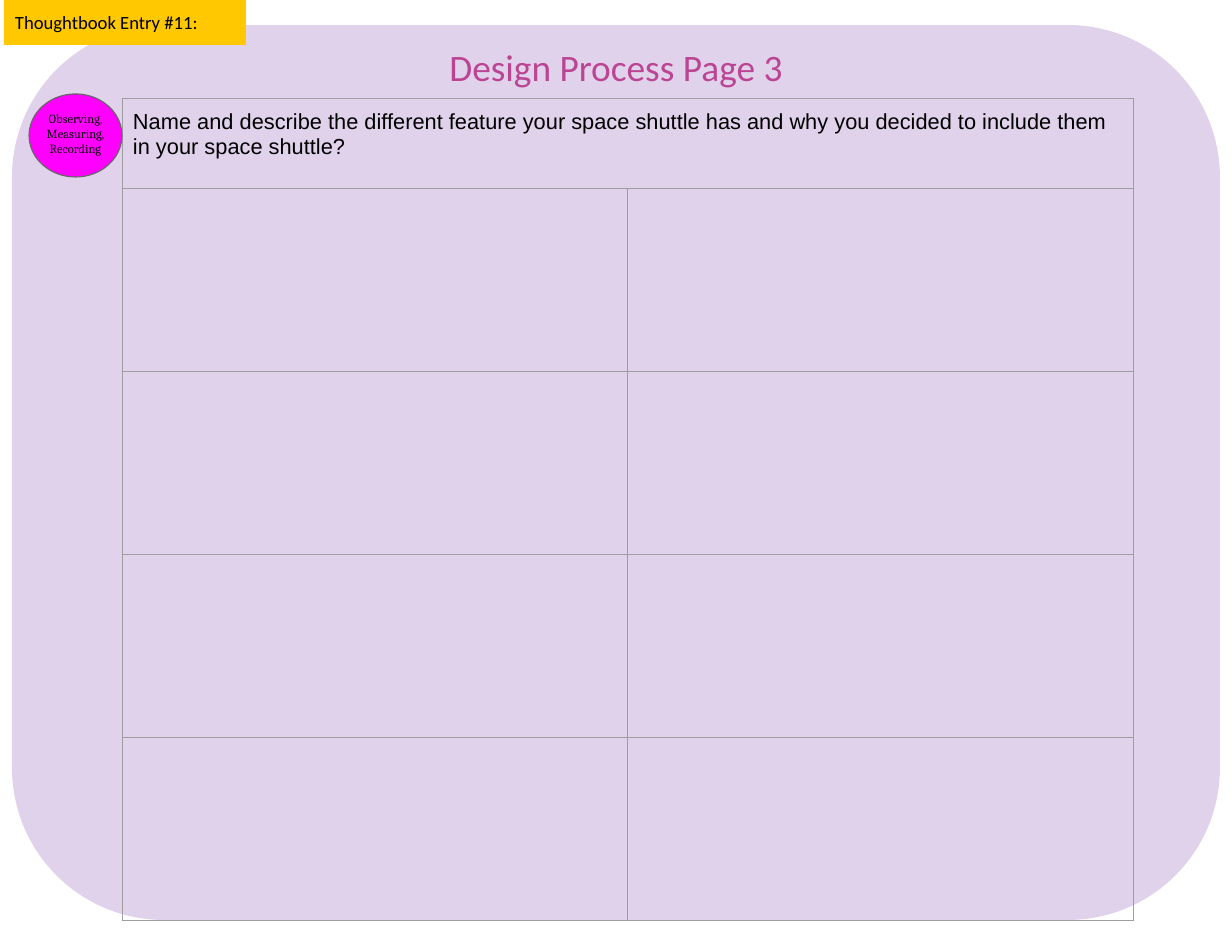
import dataclasses

import pptx
import pptx.dml.color
import pptx.enum.shapes
import pptx.enum.text
import pptx.oxml
import pptx.oxml.ns
import pptx.util

Align = pptx.enum.text.PP_ALIGN
Anchor = pptx.enum.text.MSO_ANCHOR
Shape = pptx.enum.shapes.MSO_SHAPE
SCALE = 914400 / 112
MARGINS = ("margin_left", "margin_top", "margin_right", "margin_bottom")


@dataclasses.dataclass(frozen=True)
class Theme:
    panel: str = "E1D2EC"
    heading: str = "BB4592"
    ink: str = "000000"
    tag: str = "FFC800"
    badge: str = "FF00FF"
    badge_line: str = "666666"
    grid: str = "9E9E9E"
    heading_size: int = 24
    prompt_size: int = 14
    tag_size: int = 12
    badge_size: int = 8
    line_width: float = 0.75


def px(length):
    return pptx.util.Emu(round(length * SCALE))


def rgb(value):
    return pptx.dml.color.RGBColor.from_string(value)


def apply(target, formats):
    for name, value in formats.items():
        setattr(target, name, value)


class PageBuilder:
    def __init__(self, theme, page):
        self.theme = theme
        self.page = page

    def fill_frame(self, frame, text, font, size, color=None, align=Align.LEFT, inset=11, anchor=Anchor.TOP):
        apply(frame, dict.fromkeys(MARGINS, px(inset)))
        apply(frame, {"word_wrap": True, "vertical_anchor": anchor,
                      "auto_size": pptx.enum.text.MSO_AUTO_SIZE.NONE})
        self.fill_text(frame, text, font, size, color, align)

    def fill_text(self, frame, text, font, size, color=None, align=Align.LEFT):
        para = frame.paragraphs[0]
        para.alignment = align
        span = para.add_run()
        span.text = text
        apply(span.font, {"name": font, "size": pptx.util.Pt(size)})
        span.font.color.rgb = rgb(color or self.theme.ink)

    def shape(self, kind, box, fill, line=None, parent=None):
        shape = (parent or self.page).shapes.add_shape(kind, *map(px, box))
        shape.shadow.inherit = False
        shape.fill.solid()
        shape.fill.fore_color.rgb = rgb(fill)
        if line:
            shape.line.color.rgb = rgb(line)
            shape.line.width = pptx.util.Pt(self.theme.line_width)
        else:
            shape.line.fill.background()
        return shape

    def panel(self, box, corner):
        panel = self.shape(Shape.ROUNDED_RECTANGLE, box, self.theme.panel)
        panel.adjustments[0] = corner
        self.page.shapes.title.element.addprevious(panel.element)

    def title(self, text, box):
        title = self.page.shapes.title
        apply(title, dict(zip(("left", "top", "width", "height"), map(px, box))))
        self.fill_frame(title.text_frame, text, "Calibri", self.theme.heading_size,
                        self.theme.heading, Align.CENTER, 13, Anchor.BOTTOM)

    def tag(self, text, box):
        tag = self.shape(Shape.RECTANGLE, box, self.theme.tag)
        self.fill_frame(tag.text_frame, text, "Calibri", self.theme.tag_size)

    def badge(self, text, box, text_drop):
        group = self.page.shapes.add_group_shape()
        self.shape(Shape.OVAL, box, self.theme.badge, self.theme.badge_line, group)
        left, top, width, height = box
        label = group.shapes.add_textbox(*map(px, (left, top + text_drop, width, height)))
        self.fill_frame(label.text_frame, text, "Cambria", self.theme.badge_size, align=Align.CENTER)

    def border(self, cell):
        properties = cell._tc.get_or_add_tcPr()
        for side in ("lnL", "lnR", "lnT", "lnB"):
            properties.append(pptx.oxml.parse_xml(
                f'<a:{side} {pptx.oxml.ns.nsdecls("a")} w="{pptx.util.Pt(self.theme.line_width)}">'
                f'<a:solidFill><a:srgbClr val="{self.theme.grid}"/></a:solidFill></a:{side}>'))

    def answer_table(self, prompt, left, top, column_width, row_heights):
        box = (left, top, 2 * column_width, sum(row_heights))
        table = self.page.shapes.add_table(len(row_heights), 2, *map(px, box)).table
        apply(table, {"first_row": False, "horz_banding": False})
        for column in table.columns:
            column.width = px(column_width)
        for row, height in zip(table.rows, row_heights):
            row.height = px(height)
        for cell in table.iter_cells():
            self.border(cell)
            cell.fill.background()
            apply(cell, dict.fromkeys(MARGINS, px(11)))
        header = table.cell(0, 0)
        header.merge(table.cell(0, 1))
        self.fill_text(header.text_frame, prompt, "Arial", self.theme.prompt_size)


def main():
    deck = pptx.Presentation()
    apply(deck, {"slide_width": px(1232), "slide_height": px(952)})
    page = deck.slides.add_slide(deck.slide_layouts[5])
    builder = PageBuilder(Theme(), page)
    builder.panel((12, 25, 1208, 895), 0.17)
    builder.title("Design Process Page 3", (13, 29, 1206, 73))
    builder.answer_table(
        "Name and describe the different feature your space shuttle has and why "
        "you decided to include them in your space shuttle?",
        122, 99, 506, [90] + [183] * 4)
    builder.badge("Observing, Measuring, Recording", (29, 94, 93, 83), 6)
    builder.tag("Thoughtbook Entry #11:", (4, 0, 242, 45))
    deck.save("out.pptx")


if __name__ == "__main__":
    main()
